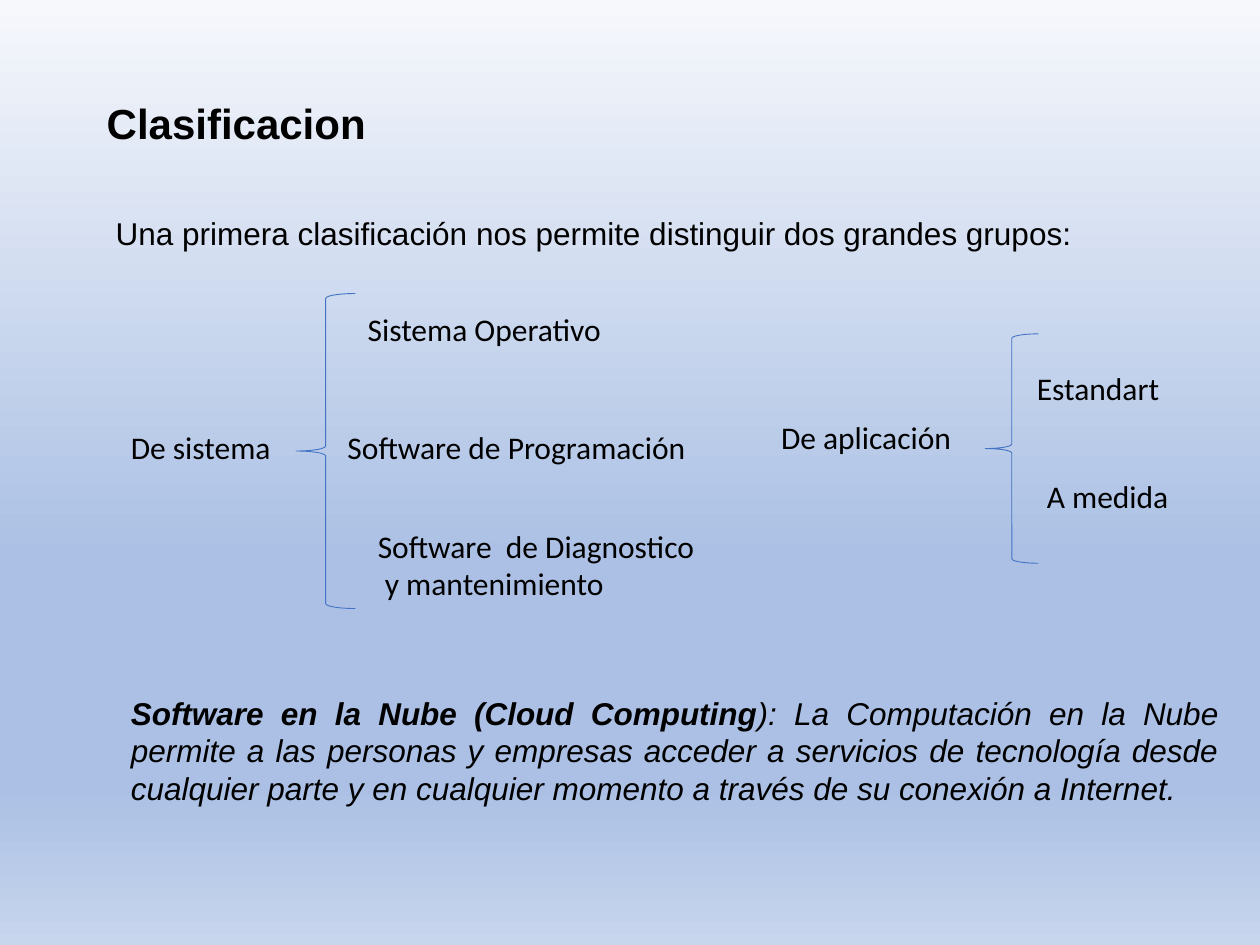
from copy import deepcopy

from pptx import Presentation
from pptx.dml.color import RGBColor
from pptx.enum.shapes import MSO_SHAPE
from pptx.enum.text import MSO_ANCHOR, MSO_AUTO_SIZE, PP_ALIGN
from pptx.oxml.ns import qn
from pptx.util import Inches, Pt


def color(value):
    return RGBColor.from_string(value)


def add_text(paragraph, text, font="Calibri", size=18, bold=False, italic=False, ink="000000"):
    run = paragraph.add_run()
    run.text = text
    run.font.name = font
    run.font.size = Pt(size)
    run.font.bold = bold
    run.font.italic = italic
    run.font.color.rgb = color(ink)


class ClassificationSlide:
    heading_font = "Arial"
    brace_color = "4472C4"

    def __init__(self, presentation):
        self.slide = presentation.slides.add_slide(presentation.slide_layouts[5])

    def background(self, stops):
        fill = self.slide.background.fill
        fill.gradient()
        fill.gradient_angle = 270
        stop_list = self.slide.element.find(".//" + qn("a:gsLst"))
        for _ in stops[2:]:
            stop_list.append(deepcopy(stop_list[0]))
        for stop, (position, shade) in zip(fill.gradient_stops, stops):
            stop.position = position
            stop.color.rgb = color(shade)

    def title(self, text, left, top, width, height):
        heading = self.slide.shapes.title
        heading.left, heading.top = Inches(left), Inches(top)
        heading.width, heading.height = Inches(width), Inches(height)
        frame = heading.text_frame
        frame.auto_size = MSO_AUTO_SIZE.NONE
        frame.vertical_anchor = MSO_ANCHOR.TOP
        paragraph = frame.paragraphs[0]
        paragraph.alignment = PP_ALIGN.CENTER
        paragraph.line_spacing = 0.9
        paragraph.space_before = Pt(10)
        add_text(paragraph, text, font=self.heading_font, size=24, bold=True)

    def text_frame(self, left, top, width, height, wrap):
        box = self.slide.shapes.add_textbox(
            Inches(left), Inches(top), Inches(width), Inches(height))
        frame = box.text_frame
        frame.word_wrap = wrap
        frame.auto_size = MSO_AUTO_SIZE.SHAPE_TO_FIT_TEXT
        return frame

    def label(self, lines, left, top, width):
        frame = self.text_frame(left, top, width, 0.1 + 0.3 * len(lines), False)
        for index, line in enumerate(lines):
            paragraph = frame.add_paragraph() if index else frame.paragraphs[0]
            add_text(paragraph, line)

    def statement(self, parts, left, top, height):
        frame = self.text_frame(left, top, 8.83, height, True)
        frame.vertical_anchor = MSO_ANCHOR.MIDDLE
        paragraph = frame.paragraphs[0]
        paragraph.alignment = PP_ALIGN.JUSTIFY
        for text, emphasis in parts:
            add_text(paragraph, text, font=self.heading_font, **emphasis)

    def brace(self, left, top, width, height):
        shape = self.slide.shapes.add_shape(
            MSO_SHAPE.LEFT_BRACE, Inches(left), Inches(top), Inches(width), Inches(height))
        shape.shadow.inherit = False
        shape.fill.background()
        shape.line.color.rgb = color(self.brace_color)
        shape.line.width = Pt(0.5)


def main():
    presentation = Presentation()
    presentation.slide_width = Inches(10)
    presentation.slide_height = Inches(7.5)

    page = ClassificationSlide(presentation)
    page.background([(0, "F6F8FC"), (0.59, "ABC0E4"), (0.83, "ABC0E4"), (1, "C7D5ED")])
    page.title("Clasificacion", 0.43, 0.77, 2.89, 0.63)
    page.statement(
        [(" Una primera clasificación nos permite distinguir dos grandes grupos:", {})],
        0.75, 1.65, 0.4)

    page.brace(2.35, 2.33, 0.47, 2.5)
    page.brace(7.82, 2.65, 0.42, 1.82)
    for lines, left, top, width in [
        (["De sistema"], 0.94, 3.35, 1.36),
        (["Sistema Operativo"], 2.82, 2.41, 2.14),
        (["Software de Programación"], 2.66, 3.35, 3),
        (["Software  de Diagnostico", " y mantenimiento"], 2.9, 4.13, 2.82),
        (["De aplicación"], 6.1, 3.27, 1.59),
        (["Estandart"], 8.13, 2.88, 1.22),
        (["A medida"], 8.21, 3.74, 1.2),
    ]:
        page.label(lines, left, top, width)

    page.statement(
        [("Software en la Nube (Cloud Computing", {"bold": True, "italic": True}),
         ("): La Computación en la Nube permite a las personas y empresas acceder a "
          "servicios de tecnología desde cualquier parte y en cualquier momento a "
          "través de su conexión a Internet.", {"italic": True})],
        0.94, 5.45, 1.01)

    presentation.save("out.pptx")


if __name__ == "__main__":
    main()
